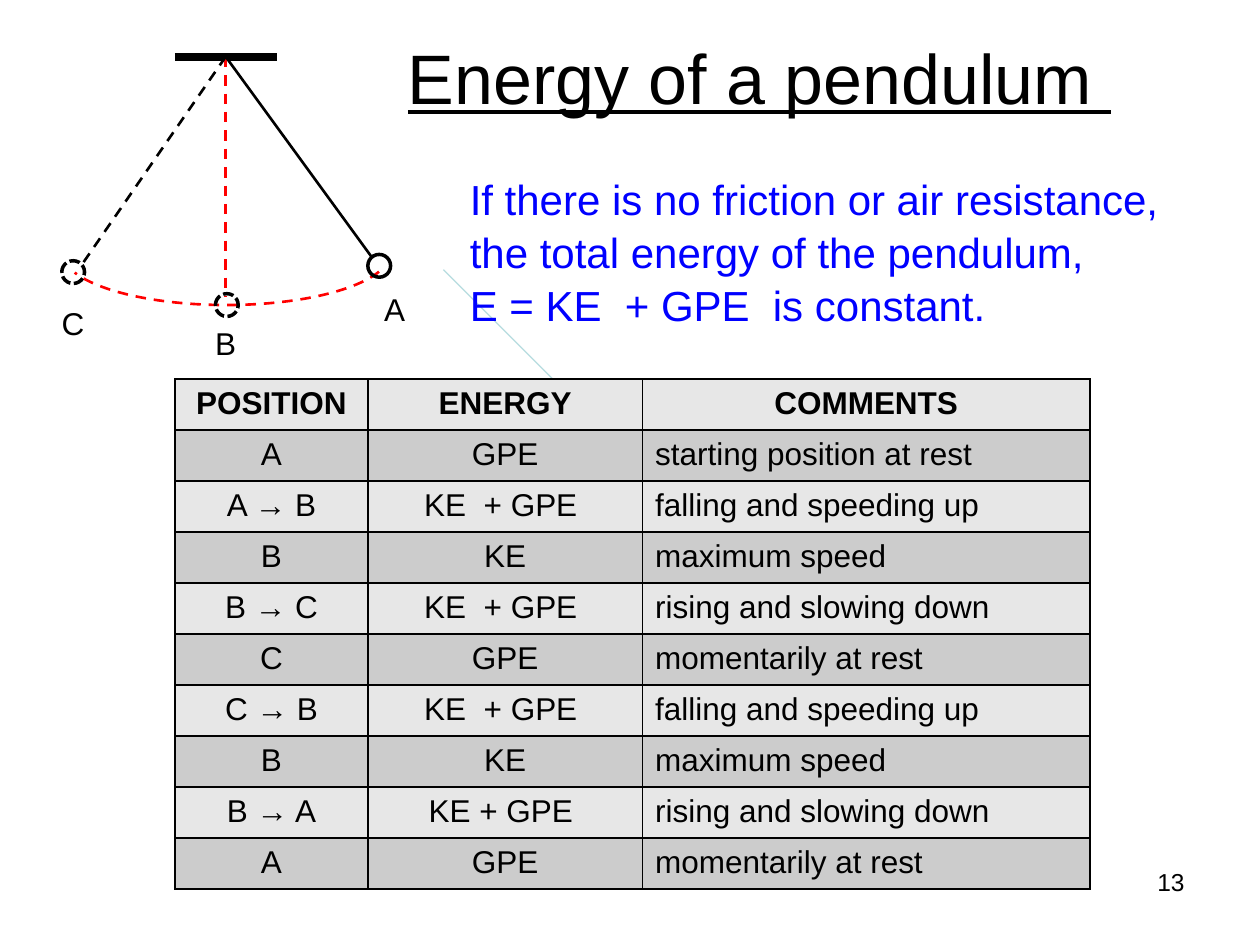
from lxml import etree
from pptx import Presentation
from pptx.dml.color import RGBColor
from pptx.enum.dml import MSO_LINE
from pptx.enum.shapes import MSO_CONNECTOR, MSO_SHAPE
from pptx.enum.text import MSO_ANCHOR, MSO_AUTO_SIZE, PP_ALIGN
from pptx.oxml.ns import qn
from pptx.util import Pt

LEFT, MID, RIGHT = PP_ALIGN.LEFT, PP_ALIGN.CENTER, PP_ALIGN.RIGHT
DASH, DOTS = MSO_LINE.DASH, MSO_LINE.SQUARE_DOT
STRAIGHT = MSO_CONNECTOR.STRAIGHT
ARC, OVAL = MSO_SHAPE.ARC, MSO_SHAPE.OVAL
FONT = "Arial"
COLORS = {"ink": "000000", "blue": "0000FF", "red": "FF0000", "pale": "B6DCDF",
          "white": "FFFFFF", "light": "E7E7E7", "dark": "CCCCCC"}

# Content
TITLE = "Energy of a pendulum "
NOTE = ["If there is no friction or air resistance,",
        "the total energy of the pendulum,",
        "E = KE  + GPE  is constant."]
ROWS = [
    ("POSITION", "ENERGY", "COMMENTS"),
    ("A", "GPE", "starting position at rest"),
    ("A → B", "KE  + GPE ", "falling and speeding up"),
    ("B", "KE", "maximum speed"),
    ("B → C", "KE  + GPE ", "rising and slowing down"),
    ("C", "GPE", "momentarily at rest"),
    ("C → B", "KE  + GPE ", "falling and speeding up"),
    ("B", "KE", "maximum speed"),
    ("B → A", "KE + GPE ", "rising and slowing down"),
    ("A", "GPE", "momentarily at rest"),
]
WIDTHS = (110.2, 157, 255.6)
ROW_H = 29.15

# Pendulum geometry: pivot, then bobs (left, top, dash) and labels (left, top)
PIVOT = (129, 32.4)
BOB = 13
BOBS = [(210.2, 145.4, None), (123.1, 167.8, DOTS), (35.3, 149, DOTS)]
LABELS = {"A": (212.4, 162), "B": (115.9, 181.4), "C": (28.1, 169.9)}
CORDS = [((100, 32.4), (158.4, 32.4), "ink", 4.5, None),
         (PIVOT, (129, 170), "red", 1.5, DASH),
         ((212.4, 146.9), PIVOT, "ink", 1.5, None),
         (PIVOT, (46.8, 151.2), "ink", 1.5, DASH)]

prs = Presentation()
prs.slide_width, prs.slide_height = Pt(720), Pt(540)
slide = prs.slides.add_slide(prs.slide_layouts[5])
shapes = slide.shapes


def tint(name):
    return RGBColor.from_string(COLORS[name])


def write(frame, lines, size=18, color="ink", align=LEFT, bold=False,
          under=False, gap=0):
    for i, line in enumerate(lines):
        para = frame.paragraphs[0] if i == 0 else frame.add_paragraph()
        para.alignment = align
        para.space_before = Pt(gap)
        run = para.add_run()
        run.text = line
        font = run.font
        font.name, font.size = FONT, Pt(size)
        font.bold, font.underline = bold, under
        font.color.rgb = tint(color)


def label(lines, x, y, w, h, wrap=True, **style):
    frame = shapes.add_textbox(Pt(x), Pt(y), Pt(w), Pt(h)).text_frame
    frame.word_wrap = wrap
    write(frame, lines, **style)


def stroke(line, color, width, dash=None):
    line.color.rgb = tint(color)
    line.width = Pt(width)
    if dash:
        line.dash_style = dash


def cord(start, end, color, width, dash=None):
    item = shapes.add_connector(STRAIGHT, *(Pt(v) for v in start + end))
    stroke(item.line, color, width, dash)
    etree.SubElement(item._element.spPr, qn("a:effectLst"))


def outline(kind, x, y, w, h, color, width, dash=None):
    item = shapes.add_shape(kind, Pt(x), Pt(y), Pt(w), Pt(h))
    item.shadow.inherit = False
    item.fill.background()
    stroke(item.line, color, width, dash)
    return item


def border(cell):
    props = cell._tc.get_or_add_tcPr()
    for i, side in enumerate(("lnL", "lnR", "lnT", "lnB")):
        edge = etree.Element(qn("a:" + side), w=str(Pt(1)))
        fill = etree.SubElement(edge, qn("a:solidFill"))
        etree.SubElement(fill, qn("a:srgbClr"), val=COLORS["ink"])
        props.insert(i, edge)


# Title
title = shapes.title
title.left, title.top, title.width, title.height = (
    Pt(v) for v in (204.5, 10, 437.8, 67.7))
title.fill.solid()
title.fill.fore_color.rgb = tint("white")
title.text_frame.auto_size = MSO_AUTO_SIZE.NONE
title.text_frame.vertical_anchor = MSO_ANCHOR.MIDDLE
write(title.text_frame, [TITLE], size=40, align=RIGHT, under=True)

# Page number and pale stroke
label(["13"], 516.2, 491.8, 167.8, 37.4, size=14, align=RIGHT)
cord((253.4, 154.1), (325.4, 226.1), "pale", 0.75)

# Pendulum
for part in CORDS:
    cord(*part)
swing = outline(ARC, 35.3, 113.8, 187.9, 60.5, "red", 1.5, DASH)
swing.rotation = 180
swing.adjustments[0], swing.adjustments[1] = 112.38, 211.37
for x, y, dash in BOBS:
    outline(OVAL, x, y, BOB, BOB, "ink", 2, dash)
for name, (x, y) in LABELS.items():
    label([name], x, y, 27, 29, wrap=False)

# Table
table = shapes.add_table(len(ROWS), len(WIDTHS), Pt(100), Pt(216.7),
                         Pt(sum(WIDTHS)), Pt(ROW_H * len(ROWS))).table
for col, width in zip(table.columns, WIDTHS):
    col.width = Pt(width)
for r, row in enumerate(ROWS):
    table.rows[r].height = Pt(ROW_H)
    for c, text in enumerate(row):
        cell = table.cell(r, c)
        cell.fill.solid()
        cell.fill.fore_color.rgb = tint("dark" if r % 2 else "light")
        border(cell)
        write(cell.text_frame, [text], bold=r == 0,
              align=LEFT if r and c == 2 else MID)

# Note on total energy
label(NOTE, 261.4, 95.8, 410.4, 94.3, size=24, color="blue", gap=1.3)

prs.save("out.pptx")
